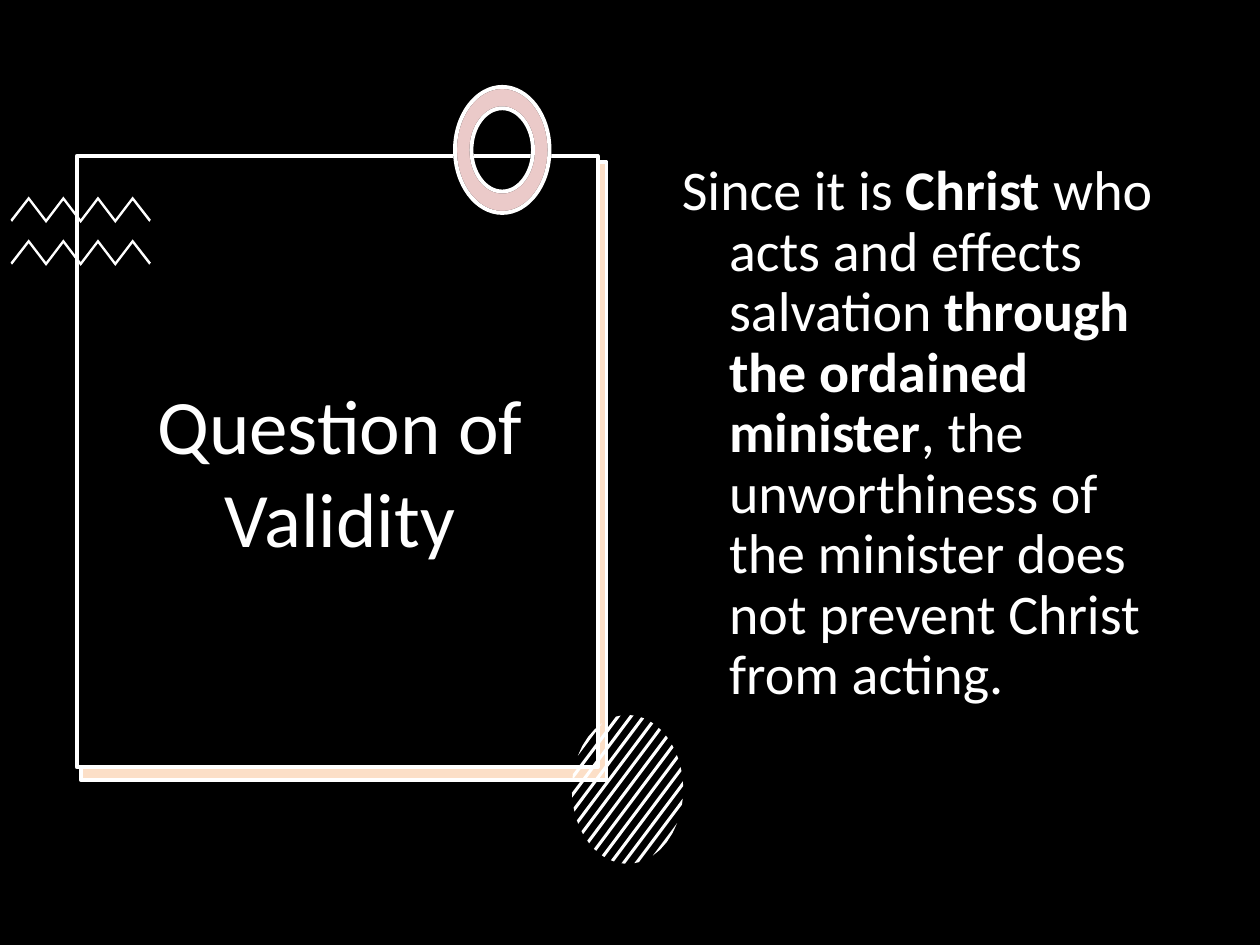
import math
from dataclasses import dataclass
from typing import Optional

import lxml.etree
import pptx
import pptx.dml.color
import pptx.enum.shapes
import pptx.enum.text
import pptx.oxml.ns
import pptx.util

Pt = pptx.util.Pt
qn = pptx.oxml.ns.qn
Point = tuple[float, float]


@dataclass(frozen=True)
class Theme:
    black: str = "000000"
    white: str = "FFFFFF"
    orange: str = "F79646"
    red: str = "C0504D"
    font: str = "Calibri"
    title_size: float = 44
    body_size: float = 32
    outline: float = 2.25
    tint_opacity: int = 30


@dataclass(frozen=True)
class Box:
    left: float
    top: float
    width: float
    height: float

    def lengths(self) -> list[pptx.util.Length]:
        return [Pt(value) for value in (self.left, self.top, self.width, self.height)]


@dataclass(frozen=True)
class Style:
    fill: str
    opacity: int = 100
    line: Optional[str] = None


@dataclass(frozen=True)
class Panel:
    box: Box
    style: Style


@dataclass(frozen=True)
class Ellipse:
    center_x: float
    center_y: float
    radius_x: float
    radius_y: float

    def place(self, x: float, y: float) -> Point:
        """Map a point of the unit circle onto the ellipse."""
        return self.center_x + self.radius_x * x, self.center_y + self.radius_y * y

    def at(self, angle: float) -> Point:
        return self.place(math.cos(angle), math.sin(angle))

    def bezier(self) -> list[Point]:
        """Start point, then two handles and an end point for each quarter."""
        handle = 0.55
        points = [self.place(0, -1)]
        for x, y in [(0, -1), (-1, 0), (0, 1), (1, 0)]:
            next_x, next_y = y, -x
            points += [self.place(x + handle * next_x, y + handle * next_y),
                       self.place(next_x + handle * x, next_y + handle * y),
                       self.place(next_x, next_y)]
        return points


THEME = Theme()
ORANGE_TINT = Style(THEME.orange, THEME.tint_opacity, THEME.white)
RED_TINT = Style(THEME.red, THEME.tint_opacity, THEME.white)

PANELS = [
    Panel(Box(0, 0, 720, 540), Style(THEME.black)),
    Panel(Box(46.1, 93.6, 300.5, 353), Style(THEME.white)),
    Panel(Box(46.1, 92.7, 300.5, 353), ORANGE_TINT),
    Panel(Box(44, 89, 297.5, 349.5), Style(THEME.black, line=THEME.white)),
]
ZIGZAG_TOPS = [112.3, 136.8]
RING = [Ellipse(287, 85.7, 27, 36), Ellipse(287, 85.7, 17.6, 23.8)]
RING_STYLES = [Style(THEME.white, line=THEME.black), RED_TINT]
HATCHED = Ellipse(358.6, 451.1, 31.8, 42.5)

TITLE_BOX = Box(49.7, 109.6, 289.4, 318.2)
BODY_BOX = Box(382.5, 89.3, 293.8, 342.7)
BODY_RUNS = [
    ("Since it is ", False),
    ("Christ", True),
    (" who acts and effects salvation ", False),
    ("through the ordained minister", True),
    (", the unworthiness of the minister does not prevent Christ from acting.", False),
]


def color(value: str) -> pptx.dml.color.RGBColor:
    return pptx.dml.color.RGBColor.from_string(value)


def apply_style(shape, style: Style) -> None:
    shape.shadow.inherit = False
    shape.fill.solid()
    shape.fill.fore_color.rgb = color(style.fill)
    if style.opacity < 100:
        color_element = next(shape.fill._xPr.iter(qn("a:srgbClr")))
        lxml.etree.SubElement(color_element, qn("a:alpha"), val=str(style.opacity * 1000))
    if style.line:
        shape.line.color.rgb = color(style.line)
        shape.line.width = Pt(THEME.outline)
    else:
        shape.line.fill.background()


def draw_panel(shapes, panel: Panel) -> None:
    rectangle = pptx.enum.shapes.MSO_SHAPE.RECTANGLE
    apply_style(shapes.add_shape(rectangle, *panel.box.lengths()), panel.style)


def draw_outline(shapes, contours: list[list[Point]], style: Style):
    """Draw one freeform; contours after the first cut holes in it."""
    scaled = [[(Pt(x), Pt(y)) for x, y in contour] for contour in contours]
    builder = shapes.build_freeform(*scaled[0][0])
    builder.add_line_segments(scaled[0][1:], close=True)
    for contour in scaled[1:]:
        builder.move_to(*contour[0])
        builder.add_line_segments(contour[1:], close=True)
    shape = builder.convert_to_shape()
    apply_style(shape, style)
    return shape


def curve_segments(shape) -> None:
    """Merge each three line segments of a freeform into one Bezier curve."""
    lines = list(shape._element.iter(qn("a:lnTo")))
    for first, second, third in zip(lines[::3], lines[1::3], lines[2::3]):
        curve = lxml.etree.Element(qn("a:cubicBezTo"))
        first.addprevious(curve)
        for line in (first, second, third):
            curve.append(line[0])
            line.getparent().remove(line)


def draw_zigzag(shapes, top: float) -> None:
    first_peak, half_period, rise, thickness, end = 16.4, 9.9, 13, 2.2, 0.9
    middle = [(first_peak + half_period * i, top + rise * (i % 2)) for i in range(7)]
    left, right = 6, 86.2
    upper = [(left, top + rise + 0.3), *middle, (right, top + rise + 0.3)]
    lower = [(x, y + thickness) for x, y in middle]
    lower = [(left + end, top + rise + 1.5), *lower, (right - end, top + rise + 1.5)]
    draw_outline(shapes, [upper + lower[::-1]], Style(THEME.white))


def draw_ring(shapes, style: Style) -> None:
    curve_segments(draw_outline(shapes, [ellipse.bezier() for ellipse in RING], style))


def draw_hatched_ellipse(shapes, ellipse: Ellipse) -> None:
    """Fill an ellipse with diagonal bands, each clipped to its edge."""
    spacing, half_width, last, limit = 0.23, 0.035, 6, math.sqrt(2)
    for index in range(-last, last + 1):
        edges = [max(-limit, min(limit, index * spacing + side * half_width))
                 for side in (-1, 1)]
        start, stop = [math.acos(edge / limit) for edge in edges]
        steps = 2 if abs(index) == last else 1
        offsets = [start + (stop - start) * i / steps for i in range(steps + 1)]
        near = [ellipse.at(math.pi / 4 - offset) for offset in offsets]
        far = [ellipse.at(math.pi / 4 + offset) for offset in reversed(offsets)]
        draw_outline(shapes, [near + far], Style(THEME.white))


def add_text(shapes, box: Box, runs: list[tuple[str, bool]], size: float):
    """Add a one-paragraph text box and return its text frame."""
    text_frame = shapes.add_textbox(*box.lengths()).text_frame
    text_frame.word_wrap = True
    paragraph = text_frame.paragraphs[0]
    for text, bold in runs:
        run = paragraph.add_run()
        run.text = text
        run.font.name, run.font.size, run.font.bold = THEME.font, Pt(size), bold
        run.font.color.rgb = color(THEME.white)
    return text_frame


def main() -> None:
    presentation = pptx.Presentation()
    presentation.slide_width, presentation.slide_height = Pt(720), Pt(540)
    shapes = presentation.slides.add_slide(presentation.slide_layouts[6]).shapes

    for panel in PANELS:
        draw_panel(shapes, panel)
    zigzags = shapes.add_group_shape().shapes
    for top in ZIGZAG_TOPS:
        draw_zigzag(zigzags, top)
    for style in RING_STYLES:
        draw_ring(shapes, style)
    draw_hatched_ellipse(shapes.add_group_shape().shapes, HATCHED)

    title = add_text(shapes, TITLE_BOX, [("Question of Validity", False)], THEME.title_size)
    title.vertical_anchor = pptx.enum.text.MSO_ANCHOR.MIDDLE
    title.paragraphs[0].alignment = pptx.enum.text.PP_ALIGN.CENTER

    body = add_text(shapes, BODY_BOX, BODY_RUNS, THEME.body_size).paragraphs[0]
    body.line_spacing, body.space_before = 0.9, Pt(6.4)
    properties = body._p.get_or_add_pPr()
    properties.set("marL", str(Pt(27)))
    properties.set("indent", str(Pt(-27)))
    presentation.save("out.pptx")


if __name__ == "__main__":
    main()
